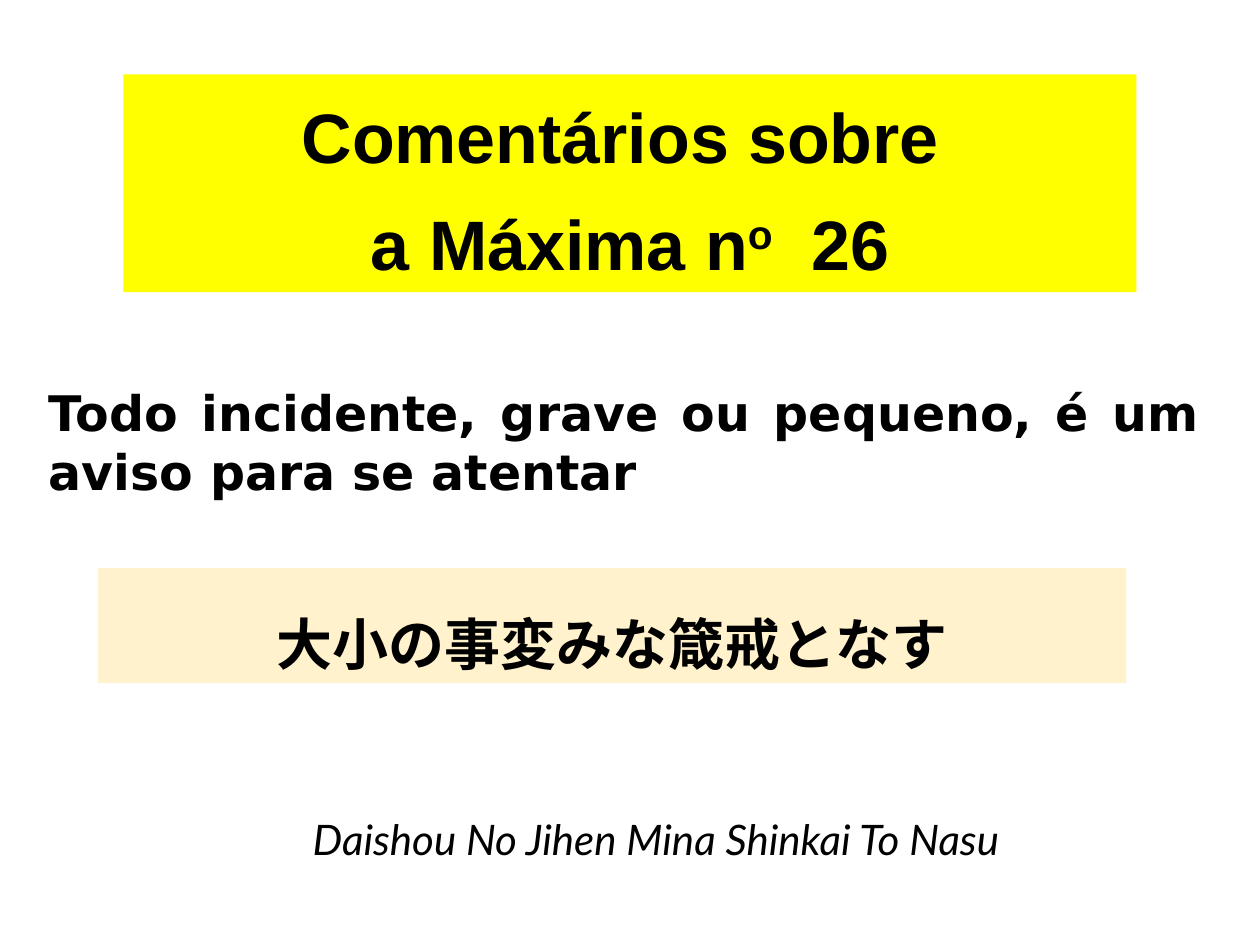
from pptx import Presentation
from pptx.dml.color import RGBColor
from pptx.enum.shapes import MSO_SHAPE
from pptx.enum.text import MSO_ANCHOR, PP_ALIGN
from pptx.util import Inches, Pt

BLACK = RGBColor(0x00, 0x00, 0x00)
YELLOW = RGBColor(0xFF, 0xFF, 0x00)
CREAM = RGBColor(0xFF, 0xF2, 0xCC)


def add_panel(slide, box, color):
    """Add a plain filled rectangle and return its text frame."""
    panel = slide.shapes.add_shape(MSO_SHAPE.RECTANGLE, *map(Inches, box))
    panel.shadow.inherit = False
    panel.fill.solid()
    panel.fill.fore_color.rgb = color
    panel.line.fill.background()
    return panel.text_frame


def add_label(slide, box):
    """Add a text box and return its text frame."""
    return slide.shapes.add_textbox(*map(Inches, box)).text_frame


def style_text(frame, face, size, bold=False, italic=False,
               align=PP_ALIGN.CENTER, anchor=MSO_ANCHOR.TOP):
    """Set wrapping, alignment and font for a whole frame."""
    frame.word_wrap = True
    frame.vertical_anchor = anchor
    for para in frame.paragraphs:
        para.alignment = align
        font = para.font
        font.name, font.size = face, Pt(size)
        font.bold, font.italic = bold, italic
        font.color.rgb = BLACK


def add_title(slide, box):
    """Add the two-line title with its raised ordinal."""
    frame = add_panel(slide, box, YELLOW)
    frame.text = "Comentários sobre "
    line = frame.add_paragraph()
    for text in ("a Máxima n", "o", " 26"):
        line.add_run().text = text
    mark = line.runs[1].font._element
    mark.set("baseline", "30000")
    mark.set("spc", "1100")
    style_text(frame, "Arial", 40, bold=True)
    for para in frame.paragraphs:
        para.line_spacing = 1.15
        para.space_after = Pt(6)


def add_maxim(slide, box):
    """Add the maxim in Portuguese."""
    frame = add_label(slide, box)
    frame.text = "Todo incidente, grave ou pequeno, é um aviso para se atentar"
    style_text(frame, "DejaVu Sans", 28, bold=True, align=PP_ALIGN.JUSTIFY)


def add_kanji(slide, box):
    """Add the maxim in Japanese at the foot of its panel."""
    frame = add_panel(slide, box, CREAM)
    frame.text = "大小の事変みな箴戒となす"
    style_text(frame, "DejaVu Sans", 32, bold=True, anchor=MSO_ANCHOR.BOTTOM)


def add_romaji(slide, box):
    """Add the Japanese reading in Latin letters."""
    frame = add_label(slide, box)
    frame.text = "Daishou No Jihen Mina Shinkai To Nasu "
    style_text(frame, "Lato", 24, italic=True)


def main():
    """Build the slide and save it."""
    deck = Presentation()
    deck.slide_width, deck.slide_height = Inches(10), Inches(7.5)
    slide = deck.slides.add_slide(deck.slide_layouts[6])
    add_title(slide, (0.98, 0.59, 8.04, 1.73))
    add_kanji(slide, (0.78, 4.51, 8.16, 0.91))
    add_maxim(slide, (0.29, 2.99, 9.32, 1.04))
    add_romaji(slide, (0.98, 6.41, 8.53, 0.5))
    deck.save("out.pptx")


if __name__ == "__main__":
    main()
